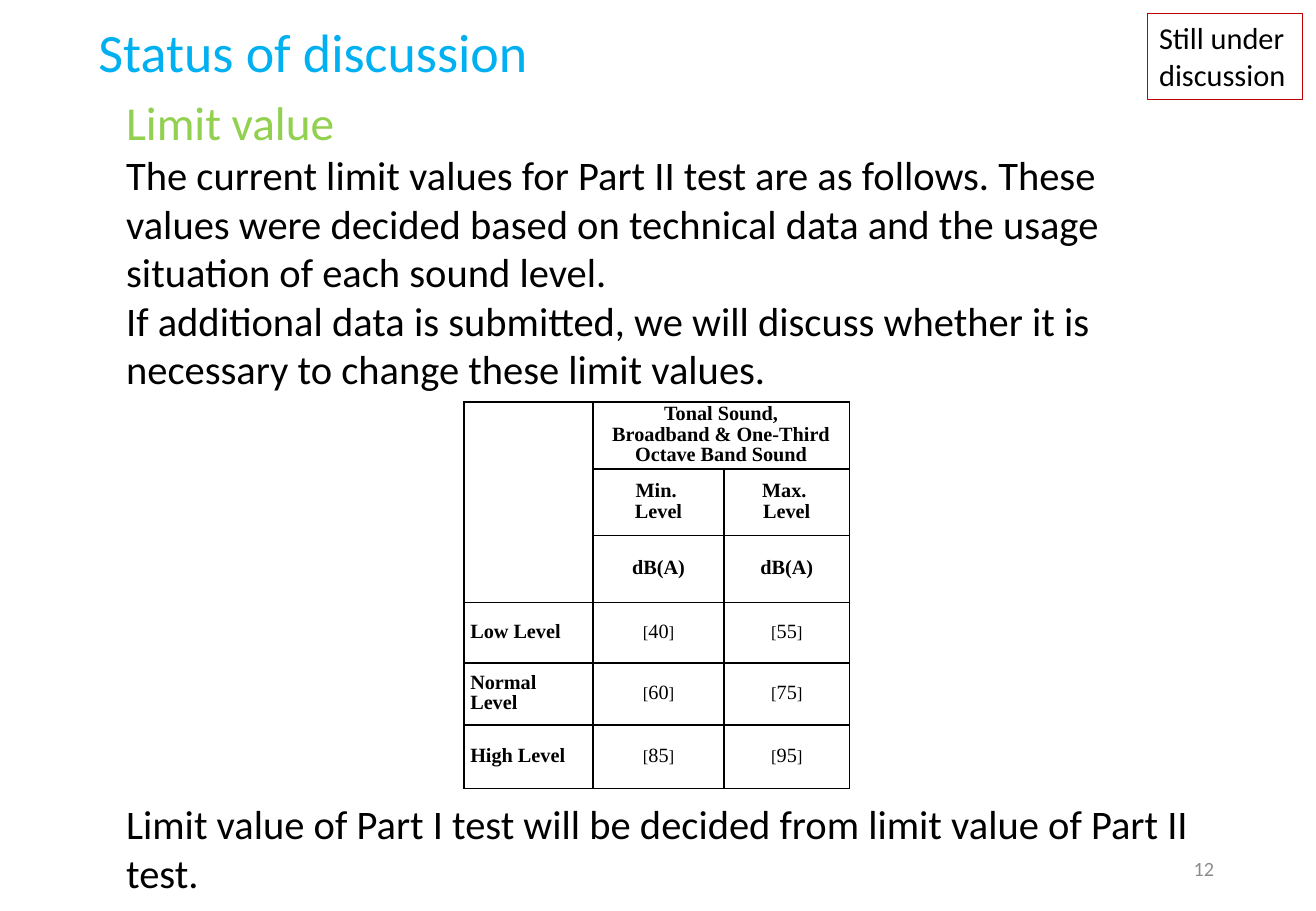
"""Build the slide on the status of the limit value discussion."""
from lxml import etree
from pptx import Presentation
from pptx.dml.color import RGBColor
from pptx.enum.shapes import MSO_SHAPE
from pptx.enum.text import MSO_ANCHOR, PP_ALIGN
from pptx.oxml.ns import qn
from pptx.util import Inches, Pt

LEFT, CENTER, RIGHT, JUSTIFY = PP_ALIGN.LEFT, PP_ALIGN.CENTER, PP_ALIGN.RIGHT, PP_ALIGN.JUSTIFY
TOP, MIDDLE = MSO_ANCHOR.TOP, MSO_ANCHOR.MIDDLE
RECTANGLE = MSO_SHAPE.RECTANGLE
BLACK, BLUE, GREEN, RED, GREY = "000000", "00B0F0", "92D050", "C00000", "8C8C8C"
SANS, SERIF = "Calibri", "Times New Roman"

TITLE = "Status of discussion"
EXPLANATION = [
    ("Limit value", 28, GREEN),
    ("The current limit values for Part II test are as follows. These values were decided "
     "based on technical data and the usage situation of each sound level.", 24, BLACK),
    ("If additional data is submitted, we will discuss whether it is necessary to change "
     "these limit values.", 24, BLACK),
]
CONCLUSION = [("Limit value of Part I test will be decided from limit value of Part II test.",
               24, BLACK)]
STATUS = "Still under discussion"
PAGE_NUMBER = "12"

SOUND_TYPES = ["Tonal Sound,", "Broadband & One-Third Octave Band Sound"]
BOUNDS = ["Min. ", "Max. "]
UNIT = "dB(A)"
LEVELS = [("Low Level", 40, 55), ("Normal Level", 60, 75), ("High Level", 85, 95)]
COLUMN_WIDTHS = [1.06, 1.08, 1.03]
ROW_HEIGHTS = [0.55, 0.55, 0.55, 0.5, 0.51, 0.52]


def rgb(color):
    return RGBColor.from_string(color)


def box(left, top, width, height):
    return [Inches(length) for length in (left, top, width, height)]


def add_text(paragraph, text, size, color=BLACK, font=SANS, bold=False):
    run = paragraph.add_run()
    run.text = text
    run.font.size, run.font.name, run.font.bold = Pt(size), font, bold
    run.font.color.rgb = rgb(color)


def fill_frame(frame, lines, align=LEFT, anchor=TOP):
    frame.word_wrap = True
    frame.vertical_anchor = anchor
    for index, line in enumerate(lines):
        paragraph = frame.add_paragraph() if index else frame.paragraphs[0]
        paragraph.alignment = align
        add_text(paragraph, *line)


def border_cell(cell):
    properties = cell._tc.get_or_add_tcPr()
    for position, side in enumerate(("lnL", "lnR", "lnT", "lnB")):
        line = etree.Element(qn(f"a:{side}"), w=str(Pt(1)))
        fill = etree.SubElement(line, qn("a:solidFill"))
        etree.SubElement(fill, qn("a:srgbClr"), val=BLACK)
        properties.insert(position, line)


def cell_paragraph(cell, align=CENTER, added=False):
    frame = cell.text_frame
    paragraph = frame.add_paragraph() if added else frame.paragraphs[0]
    paragraph.alignment = align
    paragraph.line_spacing = Pt(12)
    return paragraph


def add_heading(paragraph, text):
    add_text(paragraph, text, 12, font=SERIF, bold=True)


def add_limit_table(slide):
    frame = slide.shapes.add_table(len(ROW_HEIGHTS), len(COLUMN_WIDTHS),
                                   *box(3.82, 3.31, sum(COLUMN_WIDTHS), sum(ROW_HEIGHTS)))
    limits = frame.table
    limits.first_row = limits.horz_banding = False
    for column, width in zip(limits.columns, COLUMN_WIDTHS):
        column.width = Inches(width)
    for row, height in zip(limits.rows, ROW_HEIGHTS):
        row.height = Inches(height)
    for cell in limits.iter_cells():
        cell.fill.background()
        border_cell(cell)
        cell.vertical_anchor = MIDDLE
        cell.margin_left = cell.margin_right = Inches(0.05)
        cell.margin_top = cell.margin_bottom = 0
    limits.cell(0, 0).merge(limits.cell(2, 0))
    limits.cell(0, 1).merge(limits.cell(0, 2))

    for index, sound_type in enumerate(SOUND_TYPES):
        add_heading(cell_paragraph(limits.cell(0, 1), added=index > 0), sound_type)
    for column, bound in enumerate(BOUNDS, 1):
        bound_heading = cell_paragraph(limits.cell(1, column))
        add_heading(bound_heading, bound)
        bound_heading.add_line_break()
        add_heading(bound_heading, "Level")
        add_heading(cell_paragraph(limits.cell(2, column)), UNIT)
    for row, (level, *values) in enumerate(LEVELS, 3):
        add_heading(cell_paragraph(limits.cell(row, 0), JUSTIFY), level)
        for column, value in enumerate(values, 1):
            paragraph = cell_paragraph(limits.cell(row, column))
            for text, size in (("[", 10), (str(value), 12), ("]", 10)):
                add_text(paragraph, text, size, font=SERIF)


def main():
    presentation = Presentation()
    presentation.slide_width, presentation.slide_height = Inches(10.83), Inches(7.5)
    slide = presentation.slides.add_slide(presentation.slide_layouts[5])
    shapes = slide.shapes

    title = shapes.title
    title.left, title.top, title.width, title.height = box(0.71, 0.1, 8.06, 0.64)
    fill_frame(title.text_frame, [(TITLE, 32, BLUE)])

    explanation = shapes.add_textbox(*box(0.94, 0.72, 8.94, 2.6))
    fill_frame(explanation.text_frame, EXPLANATION)
    conclusion = shapes.add_textbox(*box(0.94, 6.53, 8.94, 0.9))
    fill_frame(conclusion.text_frame, CONCLUSION)
    page_number = shapes.add_textbox(*box(7.65, 6.95, 2.44, 0.4))
    fill_frame(page_number.text_frame, [(PAGE_NUMBER, 12, GREY)], RIGHT, MIDDLE)

    status = shapes.add_shape(RECTANGLE, *box(9.44, 0.11, 1.28, 0.71))
    status.shadow.inherit = False
    status.fill.background()
    status.line.color.rgb = rgb(RED)
    status.line.width = Pt(0.75)
    fill_frame(status.text_frame, [(STATUS, 18, BLACK)])

    add_limit_table(slide)
    presentation.save("out.pptx")


if __name__ == "__main__":
    main()
